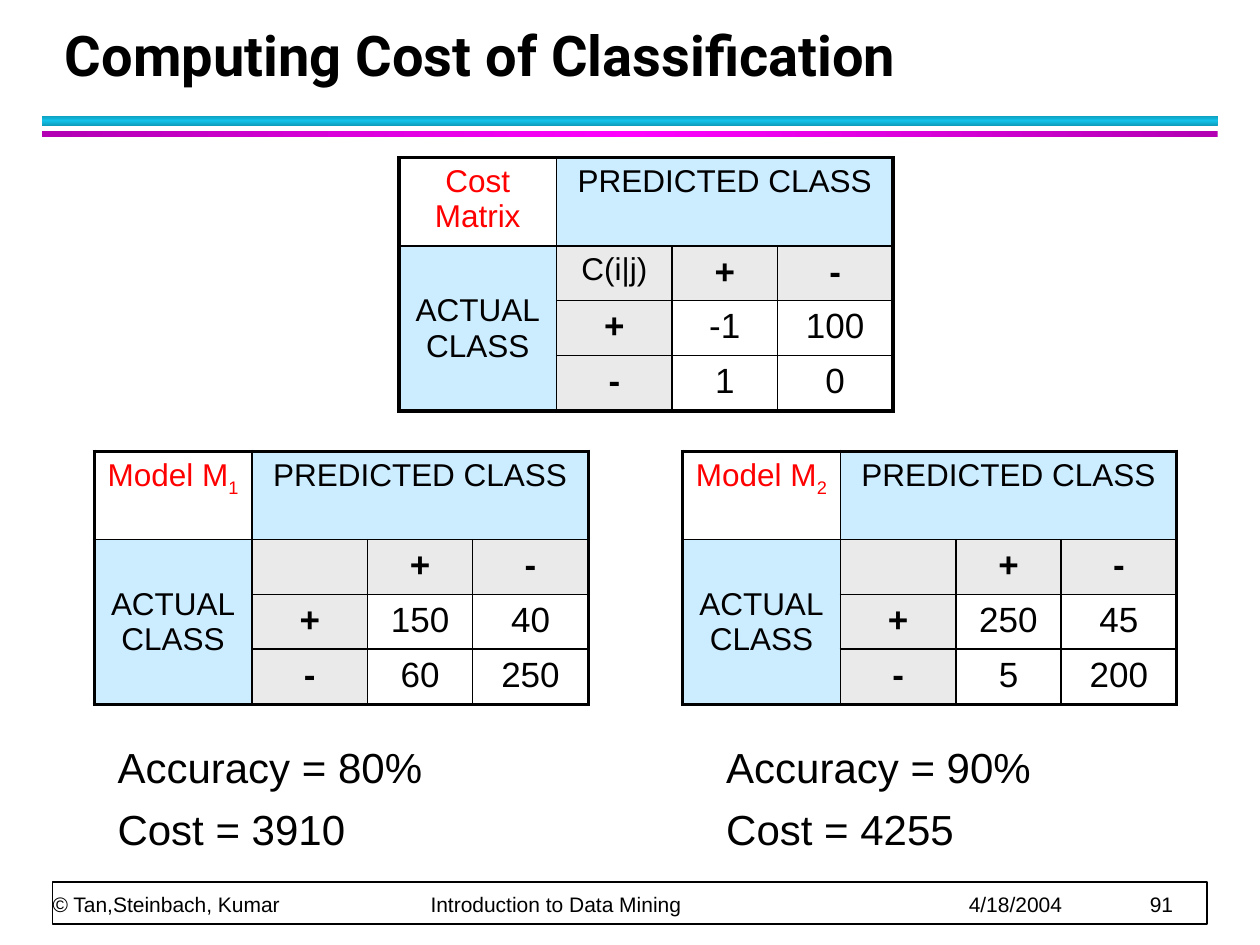
import copy
from dataclasses import dataclass

import pptx
import pptx.dml.color
import pptx.enum.shapes
import pptx.enum.text
import pptx.oxml
import pptx.oxml.ns
import pptx.util
from lxml import etree

Cm, Pt = pptx.util.Cm, pptx.util.Pt
qn = pptx.oxml.ns.qn
ANCHOR = pptx.enum.text.MSO_ANCHOR
CENTER = pptx.enum.text.PP_ALIGN.CENTER


@dataclass(frozen=True)
class Theme:
    black: str = "000000"
    white: str = "FFFFFF"
    red: str = "FF0000"
    class_fill: str = "CCECFF"
    label_fill: str = "EAEAEA"
    cyan: tuple = ("0E9BBA", "12C2E9", "0E9BBA")
    magenta: tuple = ("B200B2", "FF00FF", "B200B2")
    body_font: str = "Arial"
    title_font: str = "Roboto"
    title_size: int = 32
    finding_size: int = 24
    value_size: int = 20
    heading_size: int = 18
    footer_size: int = 12
    inner_line: float = 1
    outer_line: float = 2.25


THEME = Theme()
COLUMN_WIDTHS = (3.18, 2.33, 2.12, 2.33)
ROW_HEIGHTS = (1.78, 1.09, 1.09, 1.12)
FOOTER_TABS = (7.62, 18.47, 22.12)


def rgb(color):
    return pptx.dml.color.RGBColor.from_string(color)


def set_all(target, values):
    for name, value in values.items():
        setattr(target, name, value)


def style(span, size, color=THEME.black, bold=False, font=THEME.body_font):
    set_all(span.font, {"size": Pt(size), "bold": bold, "name": font})
    span.font.color.rgb = rgb(color)


def write(para, text, **look):
    para.text = text
    for span in para.runs:
        style(span, **look)


def add_bar(page, left, top, width, height):
    bar = page.shapes.add_shape(
        pptx.enum.shapes.MSO_SHAPE.RECTANGLE,
        Cm(left), Cm(top), Cm(width), Cm(height))
    bar.shadow.inherit = False
    return bar


def add_gradient_bar(page, top, height, colors, angle):
    bar = add_bar(page, 0.85, top, 23.7, height)
    bar.line.fill.background()
    bar.fill.gradient()
    bar.fill.gradient_angle = angle
    stops = bar.element.spPr.find(".//" + qn("a:gsLst"))
    stops.append(copy.deepcopy(stops[0]))
    for index, (stop, color) in enumerate(zip(bar.fill.gradient_stops, colors)):
        stop.position = index / 2
        stop.color.rgb = rgb(color)


def add_text(page, left, top, width, height, lines, spacing, frame=None, **look):
    """Add a text box with one paragraph for each line and return it."""
    box = page.shapes.add_textbox(Cm(left), Cm(top), Cm(width), Cm(height))
    set_all(box.text_frame, {"word_wrap": True, **(frame or {})})
    for index, line in enumerate(lines):
        para = box.text_frame.add_paragraph() if index else box.text_frame.paragraphs[0]
        write(para, line, **look)
        set_all(para, spacing)
    return box


def add_footer(page):
    frame = add_bar(page, 1.06, 17.78, 23.28, 0.85)
    frame.fill.solid()
    frame.fill.fore_color.rgb = rgb(THEME.white)
    frame.line.color.rgb = rgb(THEME.black)
    frame.line.width = Pt(THEME.inner_line)

    parts = ("© Tan,Steinbach, Kumar", "Introduction to Data Mining", "4/18/2004", "91")
    no_margins = {f"margin_{side}": 0 for side in ("left", "top", "right", "bottom")}
    box = add_text(page, 1.06, 17.78, 23.24, 0.71, ["\t".join(parts)],
                   {"line_spacing": Pt(20)},
                   {"vertical_anchor": ANCHOR.BOTTOM, **no_margins},
                   size=THEME.footer_size)
    properties = box.text_frame.paragraphs[0]._p.get_or_add_pPr()
    tabs = etree.SubElement(properties, qn("a:tabLst"))
    for position in FOOTER_TABS:
        etree.SubElement(tabs, qn("a:tab"), pos=str(Cm(position)), algn="l")


def add_borders(cell, row, column):
    """Draw thick lines on the table's edge and thin ones inside it."""
    last_row = row + (cell.span_height if cell.is_merge_origin else 1) == len(ROW_HEIGHTS)
    last_column = column + (cell.span_width if cell.is_merge_origin else 1) == len(COLUMN_WIDTHS)
    edges = {"L": column == 0, "R": last_column, "T": row == 0, "B": last_row}
    properties = cell._tc.get_or_add_tcPr()
    for side, outer in edges.items():
        width = Pt(THEME.outer_line if outer else THEME.inner_line)
        line = etree.SubElement(properties, qn(f"a:ln{side}"), w=str(width))
        fill = etree.SubElement(line, qn("a:solidFill"))
        etree.SubElement(fill, qn("a:srgbClr"), val=THEME.black)


def cell_look(row, column):
    """Return the fill and text style that belong to a place in a matrix."""
    if row == 0 and column == 0:
        return THEME.white, {"size": THEME.heading_size, "color": THEME.red}
    if row == 0 or column == 0:
        return THEME.class_fill, {"size": THEME.heading_size}
    if row == 1 and column == 1:
        return THEME.label_fill, {"size": THEME.heading_size}
    if row == 1 or column == 1:
        return THEME.label_fill, {"size": THEME.value_size, "bold": True}
    return THEME.white, {"size": THEME.value_size}


def add_matrix(page, left, top, title, values, subscript="", corner=""):
    table = page.shapes.add_table(
        len(ROW_HEIGHTS), len(COLUMN_WIDTHS), Cm(left), Cm(top),
        Cm(sum(COLUMN_WIDTHS)), Cm(sum(ROW_HEIGHTS))).table
    set_all(table, {"first_row": False, "horz_banding": False})
    for column, width in zip(table.columns, COLUMN_WIDTHS):
        column.width = Cm(width)
    for row, height in zip(table.rows, ROW_HEIGHTS):
        row.height = Cm(height)
    table.cell(0, 1).merge(table.cell(0, 3))
    table.cell(1, 0).merge(table.cell(3, 0))

    texts = [[title, "PREDICTED CLASS", "", ""],
             ["ACTUAL\vCLASS", corner, "+", "-"],
             ["", "+", *values[0]],
             ["", "-", *values[1]]]
    for row, line in enumerate(texts):
        for column, text in enumerate(line):
            cell = table.cell(row, column)
            fill, look = cell_look(row, column)
            add_borders(cell, row, column)
            cell.fill.solid()
            cell.fill.fore_color.rgb = rgb(fill)
            para = cell.text_frame.paragraphs[0]
            para.alignment = CENTER
            if text:
                write(para, text, **look)
    table.cell(1, 0).vertical_anchor = ANCHOR.MIDDLE
    if subscript:
        span = table.cell(0, 0).text_frame.paragraphs[0].add_run()
        span.text = subscript
        style(span, THEME.heading_size, THEME.red)
        span._r.get_or_add_rPr().set("baseline", "-25000")


def add_findings(page, left, accuracy, cost):
    add_text(page, left, 14.82, 8.47, 2.75,
             [f"Accuracy = {accuracy}", f"Cost = {cost}"],
             {"space_before": Pt(3), "space_after": Pt(4)}, size=THEME.finding_size)


def main():
    deck = pptx.Presentation()
    set_all(deck, {"slide_width": Cm(25.4), "slide_height": Cm(19.05)})
    page = deck.slides.add_slide(deck.slide_layouts[6])

    add_gradient_bar(page, 2.33, 0.21, THEME.cyan, 90)
    add_gradient_bar(page, 2.65, 0.11, THEME.magenta, 0)
    add_footer(page)
    add_text(page, 1.06, 0.42, 23.02, 1.48, ["Computing Cost of Classification"],
             {"line_spacing": Pt(36)}, {"vertical_anchor": ANCHOR.BOTTOM},
             size=THEME.title_size, bold=True, font=THEME.title_font)

    add_matrix(page, 8.04, 3.18, "Cost Matrix", [("-1", "100"), ("1", "0")], corner="C(i|j)")
    add_matrix(page, 1.9, 9.1, "Model M", [("150", "40"), ("60", "250")], subscript="1")
    add_matrix(page, 13.76, 9.1, "Model M", [("250", "45"), ("5", "200")], subscript="2")
    add_findings(page, 2.12, "80%", "3910")
    add_findings(page, 14.39, "90%", "4255")
    deck.save("out.pptx")


if __name__ == "__main__":
    main()
